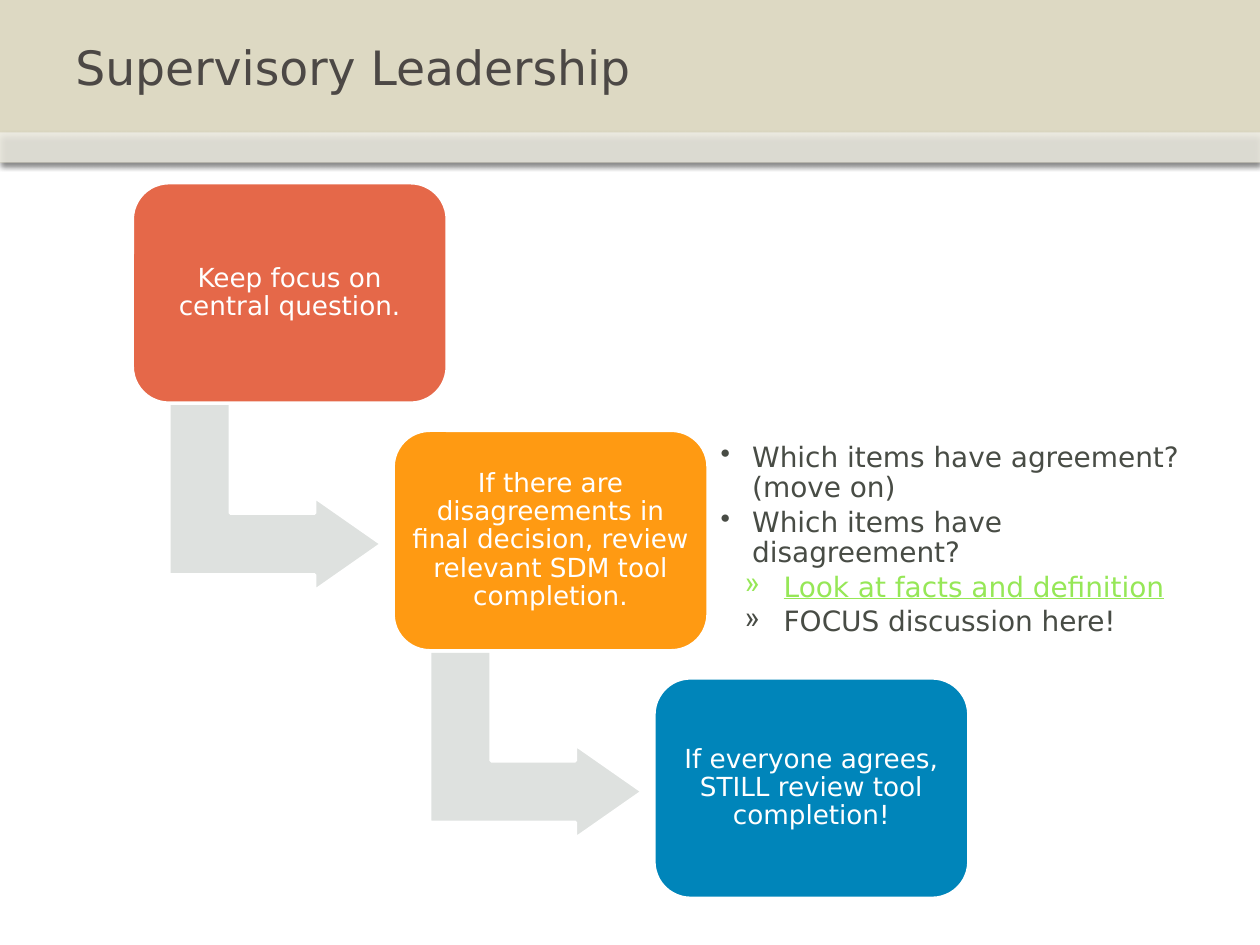
from dataclasses import dataclass

from lxml import etree
from pptx import Presentation
from pptx import util as u
from pptx.dml.color import RGBColor
from pptx.enum import shapes, text
from pptx.oxml.ns import qn

FONT = "DejaVu Sans"
WHITE, GRAY_TEXT, LINK = "FFFFFF", "484C45", "96E757"
BOX_WIDTH, BOX_HEIGHT = 2.5, 1.75
FIRST_LEFT, FIRST_TOP = 1.05, 1.45
STEP_RIGHT, STEP_DOWN = 2.07, 1.965


@dataclass
class Step:
    wording: str
    color: str


@dataclass
class Bullet:
    wording: str
    mark: str = "•"
    margin: float = 0.25
    hanging: float = 0.25
    color: str = GRAY_TEXT
    underline: bool = False


STEPS = [
    Step("Keep focus on central question.", "E56849"),
    Step("If there are disagreements in final decision, review relevant "
         "SDM tool completion.", "FF9A12"),
    Step("If everyone agrees, STILL review tool completion!", "0085BA"),
]
SUB_LEVEL = {"mark": "»", "margin": 0.5, "hanging": 0.31}
BULLETS = [
    Bullet("Which items have agreement? (move on)"),
    Bullet("Which items have disagreement?"),
    Bullet("Look at facts and definition", color=LINK, underline=True, **SUB_LEVEL),
    Bullet("FOCUS discussion here!", **SUB_LEVEL),
]


def rgb(color: str) -> RGBColor:
    return RGBColor.from_string(color)


def add_element(parent, tag: str, **attributes):
    return etree.SubElement(parent, qn(tag), attributes)


def add_filled_shape(slide, kind, left: float, top: float, width: float,
                     height: float, color: str, outline: str | None = None):
    shape = slide.shapes.add_shape(
        kind, u.Inches(left), u.Inches(top), u.Inches(width), u.Inches(height))
    shape.shadow.inherit = False
    shape.fill.solid()
    shape.fill.fore_color.rgb = rgb(color)
    if outline:
        shape.line.color.rgb = rgb(outline)
        shape.line.width = u.Pt(2)
    else:
        shape.line.fill.background()
    return shape


def prepare_frame(shape, inset_x: float, inset_y: float):
    frame = shape.text_frame
    frame.word_wrap = True
    frame.vertical_anchor = text.MSO_ANCHOR.MIDDLE
    frame.margin_left = frame.margin_right = u.Inches(inset_x)
    frame.margin_top = frame.margin_bottom = u.Inches(inset_y)
    return frame


def write(paragraph, wording: str, *, size: float, color: str,
          align=text.PP_ALIGN.LEFT, line_spacing: float = 1.0,
          space_after: float = 0, underline: bool = False) -> None:
    paragraph.alignment = align
    paragraph.line_spacing = line_spacing
    paragraph.space_after = u.Pt(space_after)
    run = paragraph.add_run()
    run.text = wording
    run.font.name = FONT
    run.font.size = u.Pt(size)
    run.font.color.rgb = rgb(color)
    if underline:
        run.font.underline = True


def add_text_box(slide, left: float, top: float, width: float, height: float):
    return slide.shapes.add_textbox(
        u.Inches(left), u.Inches(top), u.Inches(width), u.Inches(height))


def add_band(slide, top: float, height: float, color: str,
             opacity: int = 100) -> None:
    """Draw a full-width band with a soft shadow below it."""
    band = add_filled_shape(
        slide, shapes.MSO_SHAPE.RECTANGLE, 0, top, 10, height, color)
    properties = band._element.spPr
    if opacity < 100:
        fill_color = properties.find(qn("a:solidFill"))[0]
        add_element(fill_color, "a:alpha", val=str(opacity * 1000))
    shadow = add_element(
        properties.find(qn("a:effectLst")), "a:outerShdw", blurRad="40000",
        dist="23000", dir="5400000", rotWithShape="0")
    shadow_color = add_element(shadow, "a:srgbClr", val="000000")
    add_element(shadow_color, "a:alpha", val="35000")


def add_step(slide, index: int, step: Step) -> None:
    left = FIRST_LEFT + index * STEP_RIGHT
    top = FIRST_TOP + index * STEP_DOWN
    if index < len(STEPS) - 1:
        arrow = add_filled_shape(
            slide, shapes.MSO_SHAPE.BENT_UP_ARROW, left + 0.39, top + 1.65,
            1.49, 1.69, "DEE1DF", WHITE)
        arrow.rotation = 90
        for position, value in enumerate((0.328, 0.25, 0.358)):
            arrow.adjustments[position] = value
    box = add_filled_shape(
        slide, shapes.MSO_SHAPE.ROUNDED_RECTANGLE, left, top,
        BOX_WIDTH, BOX_HEIGHT, step.color, WHITE)
    box.adjustments[0] = 1 / 6
    frame = prepare_frame(box, 0.06, 0.06)
    write(frame.paragraphs[0], step.wording, size=15, color=WHITE,
          align=text.PP_ALIGN.CENTER, line_spacing=0.9)


def add_bullets(slide) -> None:
    box = add_text_box(slide, 5.65, FIRST_TOP + STEP_DOWN, 3.85, BOX_HEIGHT)
    frame = prepare_frame(box, 0.07, 0.07)
    for index, bullet in enumerate(BULLETS):
        paragraph = frame.add_paragraph() if index else frame.paragraphs[0]
        properties = paragraph._p.get_or_add_pPr()
        properties.set("marL", str(u.Inches(bullet.margin)))
        properties.set("indent", str(-u.Inches(bullet.hanging)))
        add_element(properties, "a:buChar", char=bullet.mark)
        write(paragraph, bullet.wording, size=16, color=bullet.color,
              line_spacing=0.9, space_after=2.4, underline=bullet.underline)


def main() -> None:
    presentation = Presentation()
    presentation.slide_width = u.Inches(10)
    presentation.slide_height = u.Inches(7.5)
    slide = presentation.slides.add_slide(presentation.slide_layouts[6])
    add_band(slide, 0, 1.29, "DDD9C3")
    add_band(slide, 1.05, 0.24, WHITE, opacity=53)
    title = prepare_frame(add_text_box(slide, 0.5, 0, 9, 1.05), 0.1, 0.05)
    write(title.paragraphs[0], "Supervisory Leadership", size=27, color="4C4845")
    for index, step in enumerate(STEPS):
        add_step(slide, index, step)
    add_bullets(slide)
    presentation.save("out.pptx")


if __name__ == "__main__":
    main()
